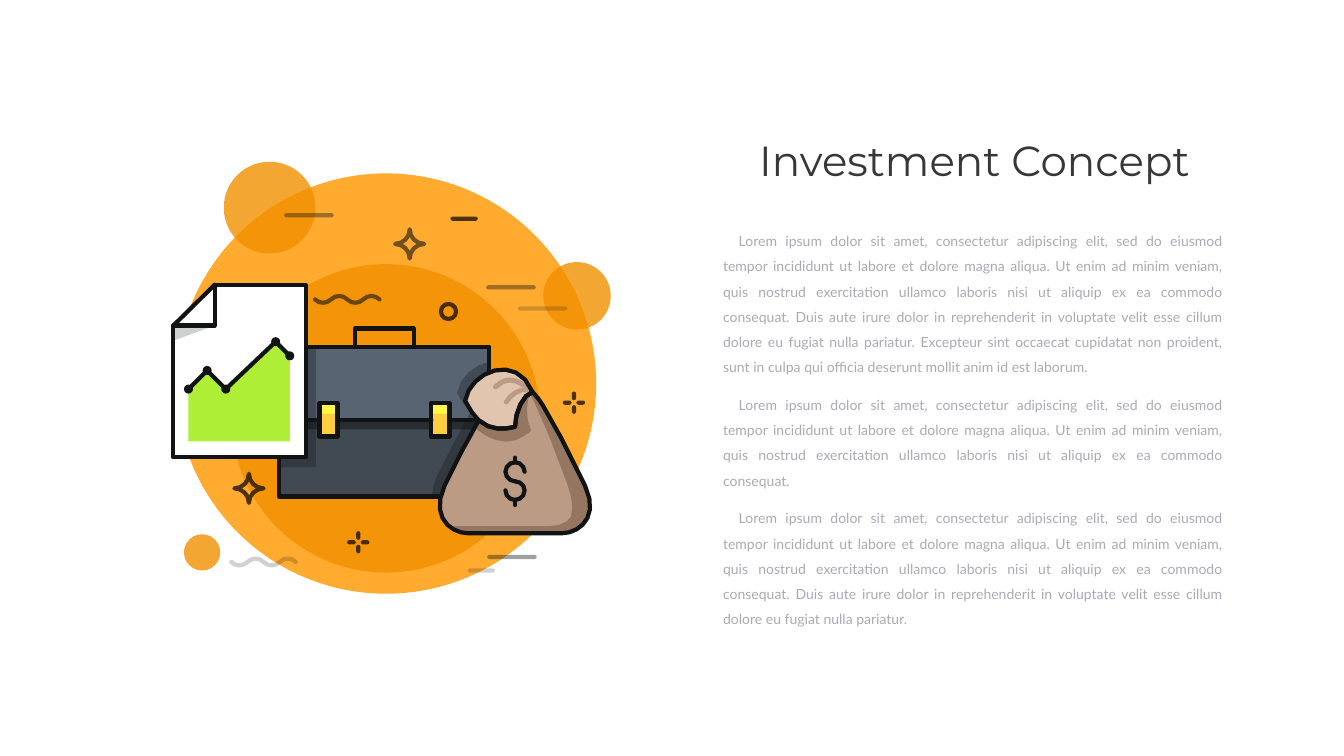
import math
import pptx
import pptx.util
import pptx.dml.color
import pptx.enum.shapes
import pptx.enum.text
import pptx.oxml
import pptx.oxml.ns

Inches = pptx.util.Inches

THEME = {
    "sun": "FFAB2F", "amber": "F29000", "ink": "111315", "shade": "111415", "black": "000000",
    "steel": "586471", "slate": "414A53", "band": "272D33", "lemon": "FFF645", "gold": "FBCF3E",
    "sack": "BB9B84", "fold": "957761", "cuff": "E1C5AF", "white": "FFFFFF", "lime": "AFEE37",
    "title": "373737", "body": "AAAAB5",
    "head_font": "Montserrat", "body_font": "Lato",
    "head_size": 60, "body_size": 20, "stroke": 6,
}

TITLE = "Investment Concept"
OPEN = ("Lorem ipsum dolor sit amet, consectetur adipiscing elit, sed do eiusmod tempor incididunt ut "
        "labore et dolore magna aliqua. Ut enim ad minim veniam, quis nostrud exercitation ullamco "
        "laboris nisi ut aliquip ex ea commodo consequat.")
MID = ("Duis aute irure dolor in reprehenderit in voluptate velit esse cillum dolore eu fugiat "
       "nulla pariatur.")
END = ("Excepteur sint occaecat cupidatat non proident, sunt in culpa qui officia deserunt mollit "
       "anim id est laborum.")
BODY = [f"{OPEN} {MID} {END}", OPEN, f"{OPEN} {MID}"]

CASE = (5.54, 6.88, 4.17, 2.97)
CLASPS = [(x, 8, 0.36, 0.66) for x in (6.34, 8.56)]
TREND = [(3.74, 7.72), (4.11, 7.35), (4.48, 7.72), (5.47, 6.78), (5.75, 7.06)]
PAGE = [(3.44, 9.07), (3.44, 6.46), (4.26, 6.46), (4.26, 5.65), (6.07, 5.65), (6.07, 9.07)]
SACK = [(11.61, 9.64), (11.32, 8.99, 10.91, 8.28, 10.77, 8.04), (10.71, 7.94, 10.64, 7.85, 10.57, 7.78),
        (10.39, 7.81, 10.22, 8.17, 10.22, 8.47), (10.01, 8.52, 9.74, 8.55, 9.5, 8.34),
        (9.31, 8.67, 9.04, 9.17, 8.82, 9.64), (8.53, 10.28, 8.97, 10.58, 9.28, 10.58),
        (11.16, 10.58), (11.47, 10.58, 11.91, 10.28, 11.61, 9.64)]
CUFF = [(10.22, 8.47), (10.22, 8.17, 10.39, 7.81, 10.57, 7.78), (10.25, 6.99, 9.33, 7.37, 9.23, 7.95),
        (9.31, 8.12, 9.41, 8.25, 9.5, 8.34), (9.74, 8.55, 10.01, 8.52, 10.22, 8.47)]
NECK = [(10.57, 7.78), (10.39, 7.81, 10.22, 8.17, 10.22, 8.47), (10.01, 8.52, 9.74, 8.55, 9.5, 8.34),
        (9.42, 8.49), (9.57, 8.62, 9.71, 8.69, 9.83, 8.73), (10.14, 8.83, 10.37, 8.69, 10.54, 8.55),
        (10.42, 8.28, 10.42, 7.89, 10.57, 7.78)]
CREASE = [(9.8, 7.64), (9.78, 7.66, 9.78, 7.69, 9.8, 7.71), (9.82, 7.73, 9.85, 7.73, 9.87, 7.71),
          (9.95, 7.63, 10.03, 7.59, 10.12, 7.59), (10.2, 7.59, 10.29, 7.62, 10.38, 7.69),
          (10.35, 7.69), (10.21, 7.72, 10.07, 7.83, 10, 7.96), (9.99, 7.98, 10, 8.01, 10.02, 8.02),
          (10.05, 8.03, 10.08, 8.02, 10.09, 8), (10.14, 7.9, 10.26, 7.81, 10.37, 7.78),
          (10.43, 7.77, 10.47, 7.78, 10.51, 7.8), (10.57, 7.78), (10.51, 7.66),
          (10.37, 7.55, 10.24, 7.49, 10.12, 7.49), (10, 7.49, 9.9, 7.54, 9.8, 7.64)]
RIM = [(11.61, 9.64), (11.32, 8.99, 10.91, 8.28, 10.77, 8.04), (10.71, 7.94, 10.64, 7.85, 10.57, 7.78),
       (10.5, 7.81), (10.55, 7.87, 10.59, 7.95, 10.63, 8.04), (10.74, 8.28, 11.05, 8.99, 11.27, 9.64),
       (11.36, 9.9, 11.38, 10.09, 11.33, 10.25), (11.28, 10.36, 11.13, 10.44, 10.87, 10.44),
       (8.91, 10.44), (9.02, 10.53, 9.16, 10.58, 9.28, 10.58), (11.16, 10.58),
       (11.47, 10.58, 11.91, 10.28, 11.61, 9.64)]
SHADOW = [(9.07, 7.79), (9.15, 7.96, 9.24, 8.09, 9.34, 8.17), (9.15, 8.51, 8.88, 9.01, 8.66, 9.47),
          (8.6, 9.62, 8.57, 9.74, 8.57, 9.85), (9.71, 9.85), (9.71, 7.18), (9.41, 7.23, 9.12, 7.48, 9.07, 7.79)]
DOLLAR = [
    [(10.22, 9.55), (10.12, 9.55, 10.03, 9.46, 10.03, 9.36), (10.03, 9.26, 10.12, 9.17, 10.22, 9.17)],
    [(10.22, 9.17), (10.32, 9.17, 10.41, 9.26, 10.41, 9.36)],
    [(10.22, 9.55), (10.32, 9.55, 10.41, 9.63, 10.41, 9.73), (10.41, 9.84, 10.32, 9.92, 10.22, 9.92)],
    [(10.22, 9.92), (10.12, 9.92, 10.03, 9.84, 10.03, 9.73)],
]
DASHES = [(9.71, 11.05, 0.9, "shade", 40), (9.69, 5.7, 0.9, "shade", 40), (5.68, 4.27, 0.9, "shade", 40),
          (9.32, 11.32, 0.46, "shade", 20), (8.98, 4.34, 0.46, "black", 70), (10.32, 6.12, 0.9, "shade", 20)]


def disc(x, y, r):
    return x - r, y - r, 2 * r, 2 * r


def wave(x, y, step=0.32):
    path = [(x, y)]
    for i in range(4):
        a, b = x + i * step, y + (-0.09 if i % 2 else 0.09)
        path.append((a + 0.09, b, a + 0.23, b, a + step, y))
    return path


def spark(x, y, r=0.29, k=0.13):
    tips = [(0, 1), (-1, 0), (0, -1), (1, 0), (0, 1)]
    path = [(x, y + r)]
    for (a, b), (c, d) in zip(tips, tips[1:]):
        path.append((x + a * k, y + b * k, x + c * k, y + d * k, x + c * r, y + d * r))
    return path


def cross(x, y, near=0.09, far=0.18):
    return [("line", (x + a * near, y + b * near, x + a * far, y + b * far), None, "black", 70)
            for a, b in ((0, -1), (-1, 0), (0, 1), (1, 0))]


SCENE = [
    [("oval", disc(7.66, 7.61, 4.17), "sun", None, 100)]
    + [("oval", disc(*spot), "amber", None, 80) for spot in
       ((7.66, 8.3, 3.06), (5.35, 4.12, 0.91), (11.45, 5.87, 0.67), (4.01, 10.96, 0.36))],
    [("rect", (5.54, 6.88, 4.17, 1.46), "steel", None, 100),
     ("rect", (5.54, 8.33, 4.17, 1.52), "slate", None, 100),
     ("rect", (5.54, 8.33, 4.17, 0.19), "band", None, 100)]
    + [("rect", (x, y + d, w, h - d), tone, None, 100)
       for x, y, w, h in CLASPS for d, tone in ((0, "lemon"), (0.21, "gold"))]
    + [("rect", box, None, "ink", 100) for box in (CASE, (7.04, 6.52, 1.17, 0.36), *CLASPS)]
    + [("line", (a, 8.33, b, 8.33), None, "ink", 100) for a, b in ((5.54, 6.34), (6.7, 8.56), (8.92, 9.71))],
    [("rect", (5.54, 6.85, 0.73, 2.42), "shade", None, 30), ("shut", SHADOW, "shade", None, 30)],
    [("shut", path, tone, None, 100) for path, tone in
     ((SACK, "sack"), (NECK, "fold"), (CUFF, "cuff"), (CREASE, "sack"), (RIM, "fold"))]
    + [("shut", path, None, "ink", 100) for path in (SACK, CUFF)],
    [("open", path, None, "ink", 100) for path in DOLLAR]
    + [("line", (10.22, y, 10.22, y + d), None, "ink", 100) for y, d in ((9.08, 0.09), (9.92, 0.1))],
    [("shut", PAGE, "white", None, 100),
     ("shut", [(4.26, 5.65), (4.26, 6.46), (3.44, 6.46)], "white", None, 100),
     ("shut", [(3.44, 6.76), (4.26, 6.46), (3.44, 6.46)], "shade", None, 20),
     ("shut", PAGE, None, "ink", 100), ("line", (3.44, 6.46, 4.26, 5.65), None, "ink", 100)],
    [("shut", TREND + [(5.75, 8.76), (3.74, 8.76)], "lime", None, 100)]
    + [("oval", disc(x, y, 0.09), "ink", None, 100) for x, y in reversed(TREND)]
    + [("open", TREND[::-1], None, "ink", 100)],
    [("open", wave(6.25, 5.94), None, "shade", 60), ("open", wave(4.59, 11.15), None, "shade", 20)]
    + [("line", (x, y, x + w, y), None, tone, a) for x, y, w, tone, a in DASHES]
    + [("shut", spark(8.13, 4.84), None, "shade", 60), ("shut", spark(4.94, 9.69), None, "black", 70),
       ("oval", disc(8.9, 6.18, 0.15), None, "black", 70)],
    cross(11.39, 7.99), cross(7.11, 10.76),
]


def rgb(name):
    return pptx.dml.color.RGBColor.from_string(THEME[name])


def add_xml(node, tag, **attrs):
    child = pptx.oxml.parse_xml(f"<a:{tag} {pptx.oxml.ns.nsdecls('a')}/>")
    for key, value in attrs.items():
        child.set(key, str(value))
    node.append(child)


def trace(path):
    dots = [path[0]]
    for part in path[1:]:
        if len(part) == 2:
            dots.append(part)
            continue
        a, b, c, d = dots[-1], part[:2], part[2:4], part[4:]
        bend = math.dist(a, b) + math.dist(b, c) + math.dist(c, d) - math.dist(a, d)
        steps = min(8, 1 + math.ceil(8 * math.sqrt(bend)))
        for t in (i / steps for i in range(1, steps + 1)):
            u = 1 - t
            dots.append(tuple(u**3 * a[i] + 3 * u * u * t * b[i] + 3 * u * t * t * c[i] + t**3 * d[i]
                              for i in (0, 1)))
    return [(Inches(x), Inches(y)) for x, y in dots]


def join(link, spot, frames):
    ends = ((spot[:2], link.begin_connect), (spot[2:], link.end_connect))
    for end, hook in ends:
        for (x, y, w, h), frame in frames:
            sides = [(x + w / 2, y), (x, y + h / 2), (x + w / 2, y + h), (x + w, y + h / 2)]
            for i, side in enumerate(sides):
                if math.dist(end, side) < 0.01:
                    hook(frame, i)


def draw(shapes, kind, spot, fill, line, alpha, frames):
    if kind == "line":
        part = shapes.add_connector(pptx.enum.shapes.MSO_CONNECTOR.STRAIGHT, *map(Inches, spot))
        join(part, spot, frames)
    elif kind in ("rect", "oval"):
        form = pptx.enum.shapes.MSO_SHAPE.RECTANGLE if kind == "rect" else pptx.enum.shapes.MSO_SHAPE.OVAL
        part = shapes.add_shape(form, *map(Inches, spot))
        if kind == "rect" and line:
            frames.append((spot, part))
    else:
        dots = trace(spot)
        pen = shapes.build_freeform(*dots[0], scale=1.0)
        pen.add_line_segments(dots[1:], close=kind == "shut")
        part = pen.convert_to_shape()
    if line:
        part.line.color.rgb = rgb(line)
        part.line.width = pptx.util.Pt(THEME["stroke"])
        edge = part.line._get_or_add_ln()
        edge.set("cap", "rnd")
        add_xml(edge, "round")
    else:
        part.line.fill.background()
    if kind == "line":
        add_xml(part.element.spPr, "effectLst")
    else:
        part.shadow.inherit = False
        if fill:
            part.fill.solid()
            part.fill.fore_color.rgb = rgb(fill)
        else:
            part.fill.background()
    if alpha < 100:
        for tone in part.element.spPr.iter(pptx.oxml.ns.qn("a:srgbClr")):
            add_xml(tone, "alpha", val=alpha * 1000)


def write(slide, box, texts, role, font, size, align):
    frame = slide.shapes.add_textbox(*map(Inches, box)).text_frame
    frame.word_wrap = True
    frame.auto_size = pptx.enum.text.MSO_AUTO_SIZE.SHAPE_TO_FIT_TEXT
    frame.text = "\n".join(texts)
    for para in frame.paragraphs:
        para.alignment = align
        for run in para.runs:
            run.font.name = THEME[font]
            run.font.size = pptx.util.Pt(THEME[size])
            run.font.color.rgb = rgb(role)
    return frame


def main():
    deck = pptx.Presentation()
    deck.slide_width, deck.slide_height = Inches(26.67), Inches(15)
    slide = deck.slides.add_slide(deck.slide_layouts[6])
    align = pptx.enum.text.PP_ALIGN
    for layer in SCENE:
        group, frames = slide.shapes.add_group_shape(), []
        for item in layer:
            draw(group.shapes, *item, frames)
    write(slide, (14.2, 2.62, 10.27, 1.11), [TITLE], "title", "head_font", "head_size", align.CENTER)
    body = write(slide, (14.25, 4.4, 10.11, 7.67), BODY, "body", "body_font", "body_size", align.JUSTIFY)
    for para in body.paragraphs:
        para.line_spacing = 1.5
        para.space_before = pptx.util.Pt(18)
        para._p.get_or_add_pPr().set("indent", str(Inches(0.31)))
    deck.save("out.pptx")


if __name__ == "__main__":
    main()
